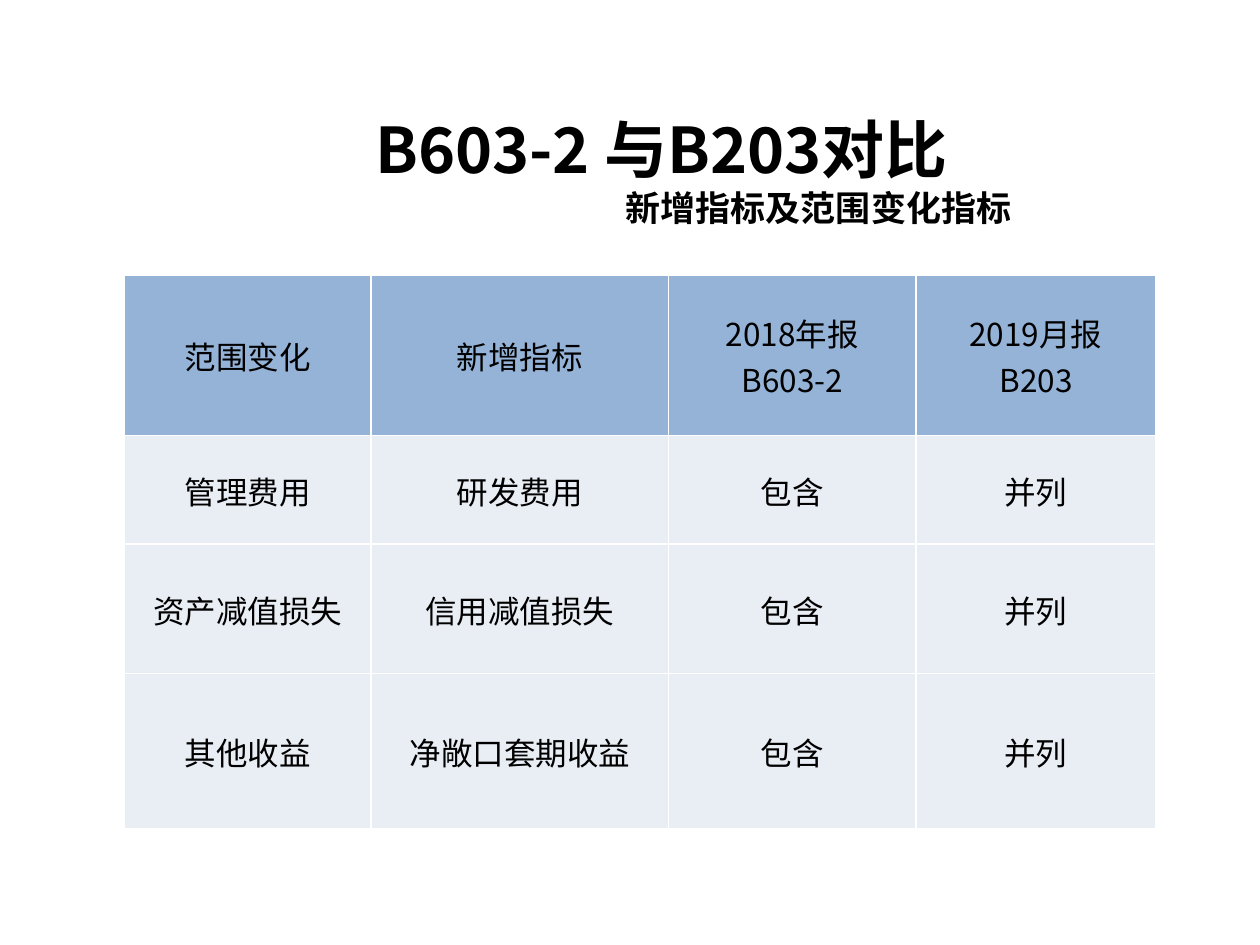
"""Build the slide comparing forms B603-2 and B203."""
from pptx import Presentation
from pptx.dml.color import RGBColor as RGB
from pptx.enum.text import MSO_ANCHOR as Anchor, PP_ALIGN as Align
from pptx.oxml import parse_xml
from pptx.oxml.ns import nsdecls
from pptx.util import Pt

FONT = "Noto Sans CJK SC"
BLACK = RGB(0, 0, 0)
BLUE = RGB(0x95, 0xB3, 0xD7)
PALE = RGB(0xE9, 0xED, 0xF4)
WHITE = RGB(255, 255, 255)

TITLE = [
    ("B603-2 与B203对比", 36, Align.CENTER),
    ("新增指标及范围变化指标", 20, Align.RIGHT),
]
ROWS = [
    ("范围变化", "新增指标", "2018年报\nB603-2", "2019月报\nB203"),
    ("管理费用", "研发费用", "包含", "并列"),
    ("资产减值损失", "信用减值损失", "包含", "并列"),
    ("其他收益", "净敞口套期收益", "包含", "并列"),
]
WIDTHS = [141, 170, 141.5, 137]
HEIGHTS = [92, 62, 74, 88.5]
LEFT, TOP = 71, 157


def style(para, size, align, bold=False):
    para.alignment = align
    for run in para.runs:
        font = run.font
        font.name, font.size, font.bold = FONT, Pt(size), bold
        font.color.rgb = BLACK
        ea = parse_xml(f'<a:ea {nsdecls("a")} typeface="{FONT}"/>')
        font._element.find("{*}latin").addnext(ea)


def edge(cell):
    props = cell._tc.get_or_add_tcPr()
    for i, side in enumerate("LRTB"):
        props.insert(i, parse_xml(
            f'<a:ln{side} {nsdecls("a")} w="{Pt(1)}"><a:solidFill>'
            f'<a:srgbClr val="{WHITE}"/></a:solidFill></a:ln{side}>'))


def add_title(slide):
    box = slide.shapes.add_textbox(Pt(171), Pt(53), Pt(414), Pt(88))
    frame = box.text_frame
    frame.word_wrap = True
    frame.vertical_anchor = Anchor.MIDDLE
    frame.text = "\n".join(text for text, _, _ in TITLE)
    for para, (_, size, align) in zip(frame.paragraphs, TITLE):
        style(para, size, align, True)


def add_grid(slide):
    table = slide.shapes.add_table(
        len(ROWS), len(WIDTHS), Pt(LEFT), Pt(TOP),
        Pt(sum(WIDTHS)), Pt(sum(HEIGHTS))).table
    table.horz_banding = False
    for col, width in zip(table.columns, WIDTHS):
        col.width = Pt(width)
    for r, (row, height) in enumerate(zip(ROWS, HEIGHTS)):
        table.rows[r].height = Pt(height)
        for c, text in enumerate(row):
            cell = table.cell(r, c)
            cell.text_frame.text = text
            cell.vertical_anchor = Anchor.MIDDLE
            cell.margin_left = cell.margin_right = cell.margin_top = Pt(0.7)
            cell.margin_bottom = 0
            cell.fill.solid()
            cell.fill.fore_color.rgb = PALE if r else BLUE
            edge(cell)
            for para in cell.text_frame.paragraphs:
                style(para, 18, Align.CENTER)


def main():
    deck = Presentation()
    deck.slide_width, deck.slide_height = Pt(720), Pt(540)
    slide = deck.slides.add_slide(deck.slide_layouts[6])
    add_grid(slide)
    add_title(slide)
    deck.save("out.pptx")


if __name__ == "__main__":
    main()
